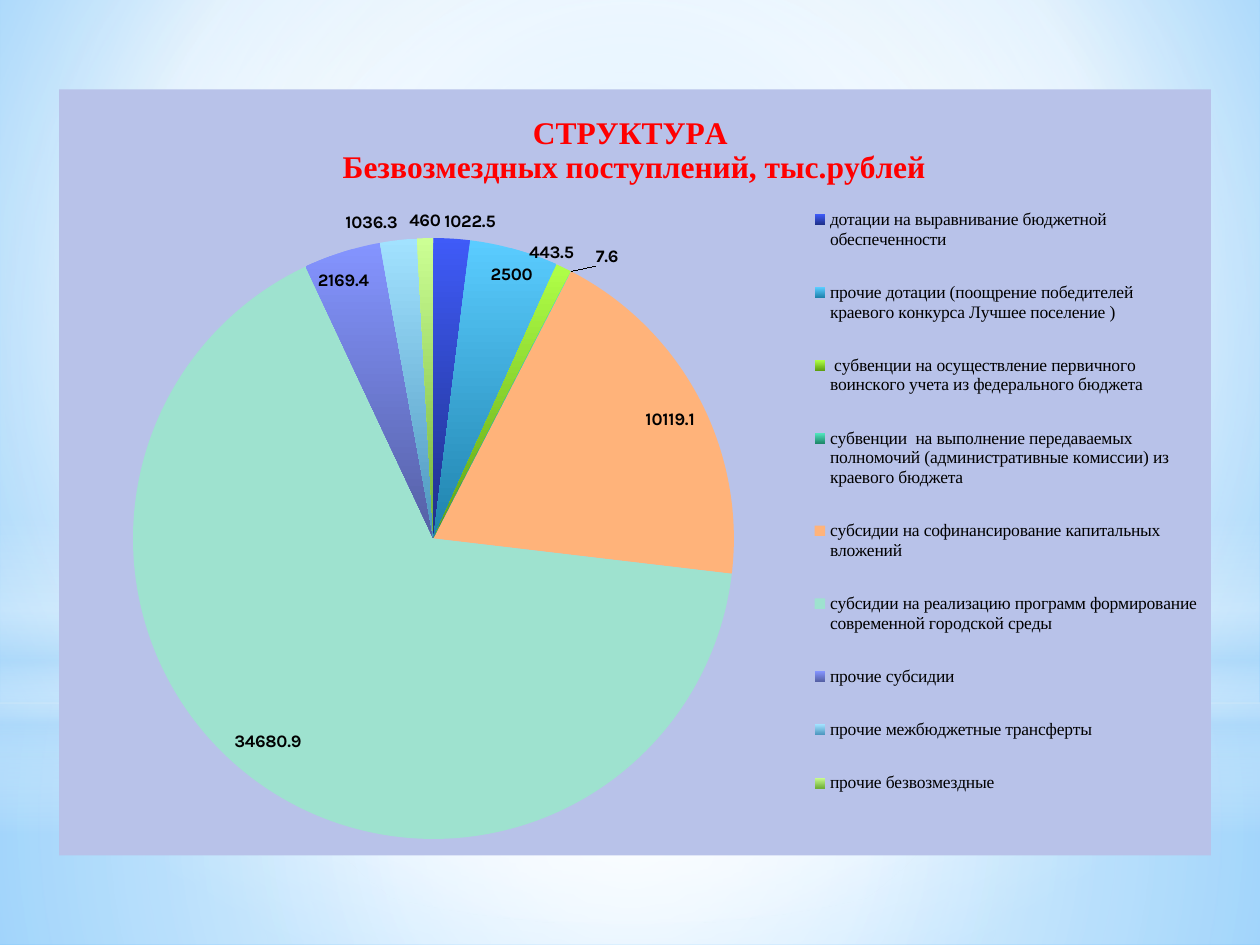
from lxml import etree
from pptx import Presentation
from pptx.chart.data import CategoryChartData
from pptx.dml.color import RGBColor
from pptx.enum.chart import XL_CHART_TYPE as Kind, XL_LABEL_POSITION as Pos
from pptx.enum.chart import XL_LEGEND_POSITION as Side
from pptx.enum.shapes import MSO_SHAPE as Form
from pptx.oxml import parse_xml
from pptx.oxml.ns import nsdecls, qn
from pptx.util import Inches, Pt

RED = RGBColor(0xFF, 0, 0)
BLACK = RGBColor(0, 0, 0)
PANEL = RGBColor(0xB8, 0xC2, 0xE9)
WHITE = RGBColor(0xFF, 0xFF, 0xFF)
SKY = RGBColor(0xB4, 0xDC, 0xFA)
PEACH = RGBColor(0xFF, 0xB3, 0x7A)
MINT = RGBColor(0x9E, 0xE2, 0xCF)
PALE = RGBColor(0x9E, 0xD5, 0xFF)
AZURE = RGBColor(0x5B, 0xB9, 0xFF)
# Top and bottom colours of the shaded slices, by slice number
SHADES = {
    0: (RGBColor(0x3F, 0x5B, 0xF8), RGBColor(0x1E, 0x30, 0x88)),
    1: (RGBColor(0x5A, 0xCC, 0xFF), RGBColor(0x1E, 0x82, 0xAC)),
    2: (RGBColor(0xB0, 0xFF, 0x48), RGBColor(0x5E, 0xA0, 0x10)),
    3: (RGBColor(0x52, 0xE8, 0xC0), RGBColor(0x1E, 0x88, 0x6A)),
    6: (RGBColor(0x84, 0x94, 0xFF), RGBColor(0x55, 0x60, 0xA4)),
    7: (RGBColor(0xA2, 0xE2, 0xFF), RGBColor(0x4C, 0x96, 0xBE)),
    8: (RGBColor(0xCC, 0xFF, 0x94), RGBColor(0x70, 0xB0, 0x38)),
}
MID = (50, 50, 50, 50)
WIDE, HIGH = 9.14, 6.08  # chart size in inches


def shade(node, stops, focus=None):
    """Swap a solid fill for a gradient: round with a focus, else downward."""
    marks = "".join(
        f'<a:gs pos="{at * 1000}"><a:srgbClr val="{tint}">'
        f'<a:alpha val="{alpha * 1000}"/></a:srgbClr></a:gs>'
        for at, tint, alpha in stops)
    way = '<a:lin ang="5400000" scaled="0"/>'
    if focus:
        l, t, r, b = (n * 1000 for n in focus)
        way = (f'<a:path path="circle"><a:fillToRect l="{l}" t="{t}" '
               f'r="{r}" b="{b}"/></a:path>')
    old = next(node.iter(qn("a:solidFill")))
    old.getparent().replace(old, parse_xml(
        f'<a:gradFill {nsdecls("a")} rotWithShape="1">'
        f'<a:gsLst>{marks}</a:gsLst>{way}</a:gradFill>'))


def place(node, slot, edge=True, **spots):
    """Give a chart part a manual layout, in inches within the chart."""
    old = node.find(qn("c:layout"))
    if old is not None:
        node.remove(old)
    layout = etree.Element(qn("c:layout"))
    hand = etree.SubElement(layout, qn("c:manualLayout"))
    if edge:
        for mode in ("xMode", "yMode"):
            etree.SubElement(hand, qn("c:" + mode)).set("val", "edge")
    for key, size in spots.items():
        share = size / (WIDE if key in "xw" else HIGH)
        etree.SubElement(hand, qn("c:" + key)).set("val", f"{share:.4f}")
    node.insert(slot, layout)


prs = Presentation()
prs.slide_width, prs.slide_height = Inches(10), Inches(7.5)
slide = prs.slides.add_slide(prs.slide_layouts[6])

# Background
slide.background.fill.solid()
shade(slide.background._cSld, [(0, PALE, 100), (60, WHITE, 100), (100, AZURE, 100)],
      (20, 10, 20, 60))

# Soft light layers: form, top, height, stops, focus
layers = [
    (Form.RECTANGLE, 5.58, 1.92,
     [(0, WHITE, 91), (37, WHITE, 76), (100, SKY, 79)], MID),
    (Form.RECTANGLE, 0, 5.58,
     [(0, WHITE, 89), (48, WHITE, 62), (100, SKY, 79)], MID),
    (Form.RECTANGLE, 4.12, 2.5,
     [(0, WHITE, 0), (29, WHITE, 30), (45, SKY, 40),
      (55, WHITE, 26), (65, SKY, 60), (100, WHITE, 0)], None),
    (Form.OVAL, 1.75, 5.58, [(0, WHITE, 100), (56, WHITE, 0)], MID),
]
for form, top, high, stops, focus in layers:
    glow = slide.shapes.add_shape(form, 0, Inches(top), Inches(10), Inches(high))
    glow.shadow.inherit = False
    glow.line.fill.background()
    glow.fill.solid()
    shade(glow._element, stops, focus)

# Pie chart
rows = [
    ("дотации на выравнивание бюджетной обеспеченности", 1022.5),
    ("прочие дотации (поощрение победителей краевого конкурса Лучшее поселение )", 2500),
    (" субвенции на осуществление первичного воинского учета из федерального бюджета", 443.5),
    ("субвенции  на выполнение передаваемых полномочий "
     "(административные комиссии) из краевого бюджета", 7.6),
    ("субсидии на софинансирование капитальных вложений", 10119.1),
    ("субсидии на реализацию программ формирование современной городской среды", 34680.9),
    ("прочие субсидии", 2169.4),
    ("прочие межбюджетные трансферты", 1036.3),
    ("прочие безвозмездные", 460),
]
data = CategoryChartData()
data.categories = [name for name, _ in rows]
data.add_series("Series 1", [value for _, value in rows])
chart = slide.shapes.add_chart(Kind.PIE, Inches(0.47), Inches(0.71),
                               Inches(WIDE), Inches(HIGH), data).chart
chart.font.name, chart.font.size = "Karla", Pt(10)
chart.font.color.rgb = BLACK
space = chart._chartSpace
space.chart.addnext(parse_xml(
    f'<c:spPr {nsdecls("c", "a")}><a:solidFill><a:srgbClr val="{PANEL}"/>'
    '</a:solidFill><a:ln><a:noFill/></a:ln></c:spPr>'))
place(space.chart.plotArea, 0, x=0.58, y=1.18, w=4.78, h=4.77)

# Title
chart.has_title = True
title = chart.chart_title
title.text_frame.text = "СТРУКТУРА \nБезвозмездных поступлений, тыс.рублей"
for para in title.text_frame.paragraphs:
    for run in para.runs:
        font = run.font
        font.name, font.size, font.bold = "Times New Roman", Pt(18), True
        font.color.rgb = RED
place(title._element, 1, x=2.22, y=0.17)

# Legend
chart.has_legend = True
legend = chart.legend
legend.position, legend.include_in_layout = Side.RIGHT, False
legend.font.name, legend.font.size = "Times New Roman", Pt(10)
legend.font.color.rgb = BLACK
place(legend._element, 1, x=5.98, y=0.69, w=3.06, h=5.16)

# Slices and their labels
plot = chart.plots[0]
plot.vary_by_categories = True
plot.has_data_labels = True
plot.data_labels.show_value = True
plot.data_labels.show_percentage = False
inner = {1, 4, 5, 6}
nudges = {0: (0.14, 0), 1: (0.16, 0.07), 2: (-0.3, 0.01), 3: (0.17, 0.01),
          4: (0.02, 0.07), 5: (-0.22, -0.2), 6: (-0.21, 0.09)}
for n in range(len(rows)):
    point = plot.series[0].points[n]
    fill = point.format.fill
    fill.solid()
    if n in SHADES:
        light, dark = SHADES[n]
        shade(point.format._element, [(0, light, 100), (100, dark, 100)])
    else:
        fill.fore_color.rgb = PEACH if n == 4 else MINT
    point.format.line.fill.background()
    label = point.data_label
    label.font.name, label.font.size, label.font.bold = "Karla", Pt(10), True
    label.font.color.rgb = BLACK
    label.position = Pos.INSIDE_END if n in inner else Pos.OUTSIDE_END
    if n in nudges:
        x, y = nudges[n]
        place(label._get_or_add_dLbl(), 1, edge=False, x=x, y=y)

prs.save("out.pptx")
